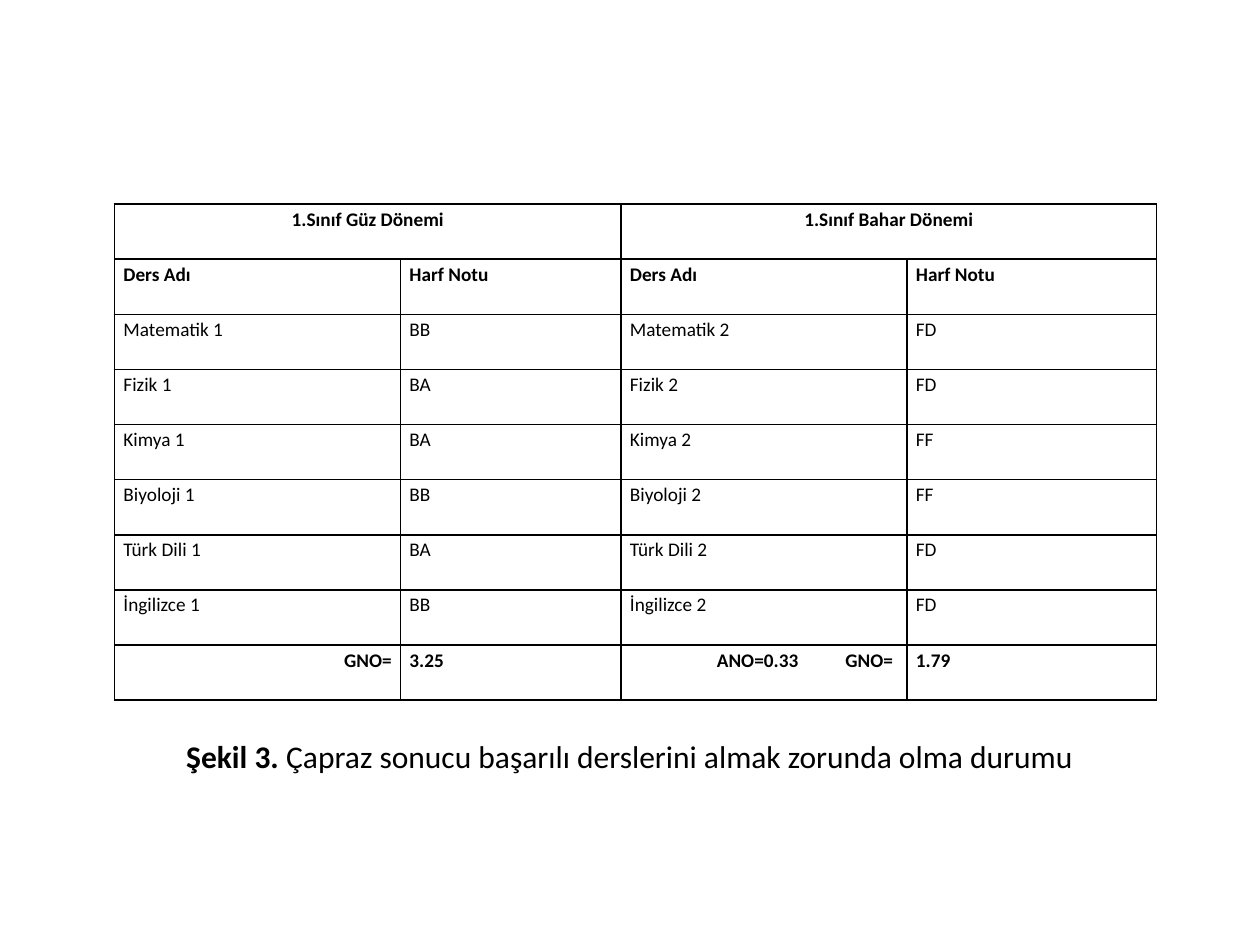
import pptx
import pptx.dml.color
import pptx.enum.text
import pptx.oxml
import pptx.oxml.ns
import pptx.util
from pptx.util import Inches

ALIGN = pptx.enum.text.PP_ALIGN
BLACK = "000000"
COLUMN_WIDTHS = [2.27, 1.75, 2.27, 1.98]
TERMS = ["1.Sınıf Güz Dönemi", "1.Sınıf Bahar Dönemi"]
HEADINGS = ["Ders Adı", "Harf Notu"]
COURSES = [
    ("Matematik", "BB", "FD"),
    ("Fizik", "BA", "FD"),
    ("Kimya", "BA", "FF"),
    ("Biyoloji", "BB", "FF"),
    ("Türk Dili", "BA", "FD"),
    ("İngilizce", "BB", "FD"),
]
AVERAGES = ["GNO=", "3.25", "\tANO=0.33\tGNO=", "1.79"]
AVERAGE_TABS = [0.69, 1.71]


def rgb(hex_colour):
    return pptx.dml.color.RGBColor.from_string(hex_colour)


def add_text(paragraph, text, size=11, bold=False, colour=BLACK, align=None, spacing=None):
    """Append a formatted run and return it."""
    if align is not None:
        paragraph.alignment = align
    if spacing is not None:
        paragraph.line_spacing = spacing
    run = paragraph.add_run()
    run.text = text
    run.font.name = "Calibri"
    run.font.size = pptx.util.Pt(size)
    run.font.bold = bold
    run.font.color.rgb = rgb(colour)
    return run


def add_tabs(paragraph, positions):
    stops = "".join(f'<a:tab pos="{Inches(p)}" algn="l"/>' for p in positions)
    namespace = pptx.oxml.ns.nsdecls("a")
    paragraph._p.get_or_add_pPr().append(
        pptx.oxml.parse_xml(f"<a:tabLst {namespace}>{stops}</a:tabLst>"))


def format_cell(cell):
    cell.margin_left = cell.margin_right = Inches(0.07)
    cell.margin_top = cell.margin_bottom = 0
    properties = cell._tc.get_or_add_tcPr()
    for side in ("lnL", "lnR", "lnT", "lnB"):
        properties.append(pptx.oxml.parse_xml(
            f'<a:{side} {pptx.oxml.ns.nsdecls("a")} w="{pptx.util.Pt(1)}">'
            f'<a:solidFill><a:srgbClr val="{BLACK}"/></a:solidFill></a:{side}>'))
    cell.fill.background()


def add_grades(slide, left, top, width, height):
    rows = [[TERMS[0], "", TERMS[1], ""], HEADINGS * 2]
    rows += [[f"{course} 1", fall, f"{course} 2", spring] for course, fall, spring in COURSES]
    rows.append(AVERAGES)
    last = len(rows) - 1

    grades = slide.shapes.add_table(
        len(rows), len(COLUMN_WIDTHS), left, top, width, height).table
    for column, column_width in zip(grades.columns, COLUMN_WIDTHS):
        column.width = Inches(column_width)
    for row in grades.rows:
        row.height = height // len(rows)

    for r, row in enumerate(rows):
        for c, text in enumerate(row):
            cell = grades.cell(r, c)
            format_cell(cell)
            if not text:
                continue
            align = ALIGN.CENTER if r == 0 else ALIGN.LEFT
            if (r, c) == (last, 0):
                align = ALIGN.RIGHT
            paragraph = cell.text_frame.paragraphs[0]
            add_text(paragraph, text, bold=r in (0, 1, last), align=align, spacing=1.15)
            if "\t" in text:
                add_tabs(paragraph, AVERAGE_TABS)
    for c in (0, 2):
        grades.cell(0, c).merge(grades.cell(0, c + 1))


def add_caption(slide, left, top, width, height):
    frame = slide.shapes.add_textbox(left, top, width, height).text_frame
    frame.word_wrap = True
    frame.auto_size = pptx.enum.text.MSO_AUTO_SIZE.SHAPE_TO_FIT_TEXT
    caption = frame.paragraphs[0]
    add_text(caption, "Şekil 3.", size=18, bold=True)
    add_text(caption, " Çapraz sonucu başarılı derslerini almak zorunda olma durumu", size=18)


def main():
    presentation = pptx.Presentation()
    presentation.slide_width, presentation.slide_height = Inches(10), Inches(7.5)
    slide = presentation.slides.add_slide(presentation.slide_layouts[6])
    add_grades(slide, Inches(0.91), Inches(1.62), Inches(sum(COLUMN_WIDTHS)), Inches(3.94))
    add_caption(slide, Inches(1.38), Inches(5.8), Inches(7.56), Inches(0.4))
    presentation.save("out.pptx")


if __name__ == "__main__":
    main()
